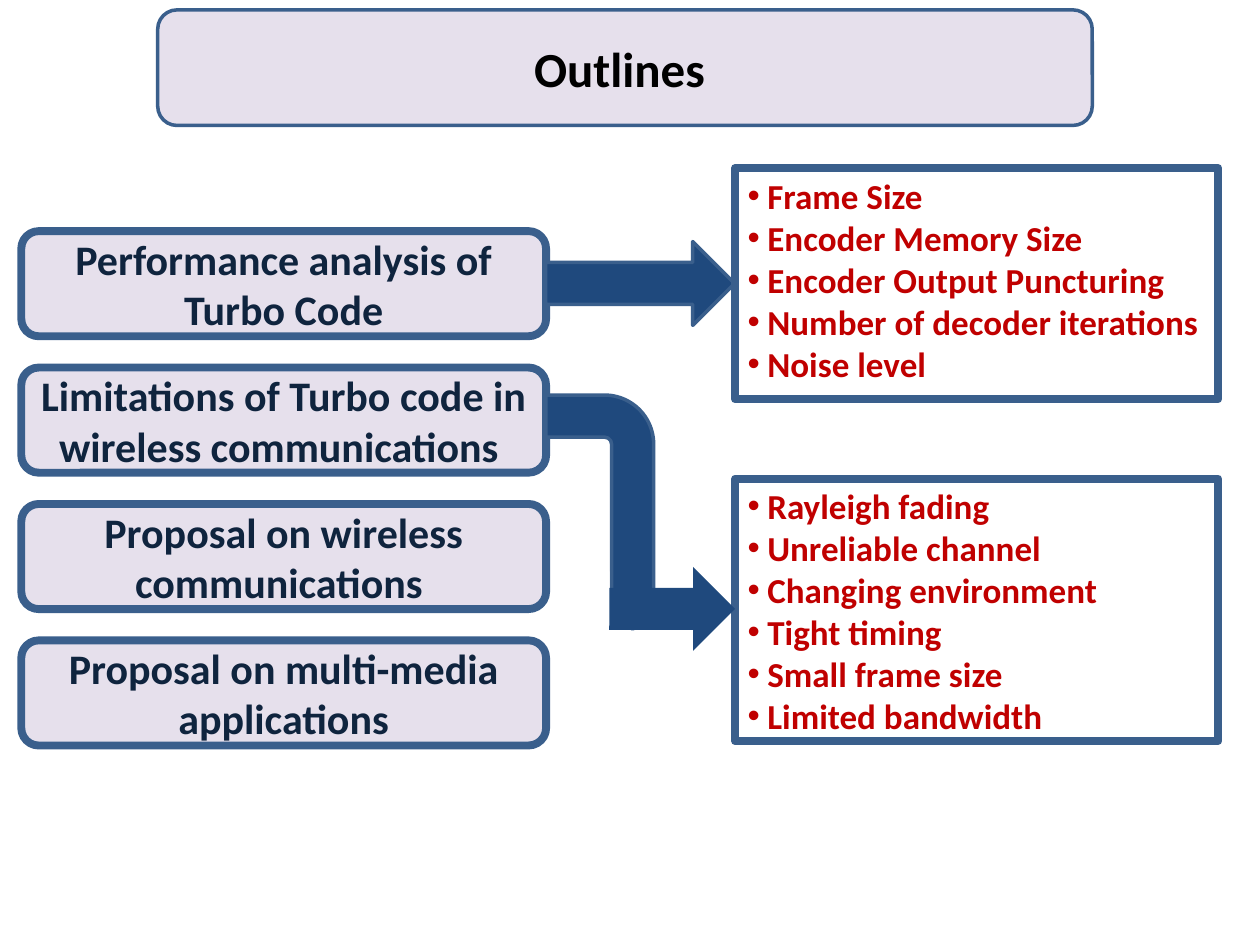
from lxml.etree import SubElement
from pptx import Presentation
from pptx.dml.color import RGBColor
from pptx.enum.shapes import MSO_SHAPE
from pptx.enum.text import MSO_ANCHOR, PP_ALIGN
from pptx.oxml.ns import qn
from pptx.util import Cm, Pt

LILAC, NAVY, EDGE, WHITE = "E6E0EC", "1F497D", "3A5F8C", "FFFFFF"


def color(hex_code):
    return RGBColor.from_string(hex_code)


def add_block(kind, place, fill=None, edge=None, edge_width=2):
    block = slide.shapes.add_shape(kind, *[Cm(length) for length in place])
    block.shadow.inherit = False
    for paint, hex_code in ((block.fill, fill), (block.line.fill, edge)):
        if hex_code:
            paint.solid()
            paint.fore_color.rgb = color(hex_code)
        else:
            paint.background()
    if edge:
        block.line.width = Pt(edge_width)
    return block


prs = Presentation()
prs.slide_width, prs.slide_height = Cm(25.4), Cm(19.05)
slide = prs.slides.add_slide(prs.slide_layouts[6])

# Title and topics: text, place, edge width, font size, font colour
topics = [
    "Performance analysis of Turbo Code",
    "Limitations of Turbo code in wireless communications ",
    "Proposal on wireless communications ",
    "Proposal on multi-media applications",
]
headings = [("Outlines ", (3.18, 0.2, 18.84, 2.33), 2, 28, "000000")]
for row, topic in enumerate(topics):
    headings.append((topic, (0.43, 4.66 + 2.75 * row, 10.58, 2.12), 4.5, 24, "0F243E"))

for text, place, edge_width, size, ink in headings:
    heading = add_block(MSO_SHAPE.ROUNDED_RECTANGLE, place, LILAC, EDGE, edge_width)
    paragraph = heading.text_frame.paragraphs[0]
    paragraph.text = text
    paragraph.alignment = PP_ALIGN.CENTER
    for name, value in {"name": "Calibri", "size": Pt(size), "bold": True}.items():
        setattr(paragraph.runs[0].font, name, value)
    paragraph.runs[0].font.color.rgb = color(ink)

# Arrow from the first topic to its details
add_block(MSO_SHAPE.RIGHT_ARROW, (11, 4.87, 3.81, 1.69), NAVY, EDGE)

# Detail lists: top, height, items
details = [
    (3.39, 4.66, ["Frame Size", "Encoder Memory Size", "Encoder Output Puncturing",
                  "Number of decoder iterations", "Noise level"]),
    (9.65, 5.29, ["Rayleigh fading", "Unreliable channel", "Changing environment",
                  "Tight timing", "Small frame size", "Limited bandwidth"]),
]
for top, height, items in details:
    frame = add_block(MSO_SHAPE.RECTANGLE, (14.82, top, 9.74, height),
                      edge=EDGE, edge_width=4.5).text_frame
    frame.word_wrap = False
    frame.vertical_anchor = MSO_ANCHOR.TOP
    for number, item in enumerate(items):
        paragraph = frame.add_paragraph() if number else frame.paragraphs[0]
        paragraph.text = item
        paragraph.alignment = PP_ALIGN.LEFT
        for name, value in {"name": "Calibri", "size": Pt(20), "bold": True}.items():
            setattr(paragraph.runs[0].font, name, value)
        paragraph.runs[0].font.color.rgb = color("C00000")
        # Hanging bullet
        properties = paragraph._p.get_or_add_pPr()
        properties.set("marL", str(Cm(0.4)))
        properties.set("indent", str(-Cm(0.4)))
        SubElement(properties, qn("a:buFont"), typeface="Arial")
        SubElement(properties, qn("a:buChar"), char="•")

# Bent path from the second topic to its details
bend = add_block(MSO_SHAPE.BENT_ARROW, (9.81, 9.16, 4.72, 2.33), NAVY, EDGE)
bend.rotation = 90
for index, value in enumerate((0.364, 0.25, 0.25, 0.425)):
    bend.adjustments[index] = value
add_block(MSO_SHAPE.RIGHT_ARROW, (12.28, 11.43, 2.54, 1.69), NAVY)
# White cover over the left half of the bent arrowhead
add_block(MSO_SHAPE.ROUNDED_RECTANGLE, (11.61, 11.43, 0.64, 1.27), WHITE, WHITE)

prs.save("out.pptx")
